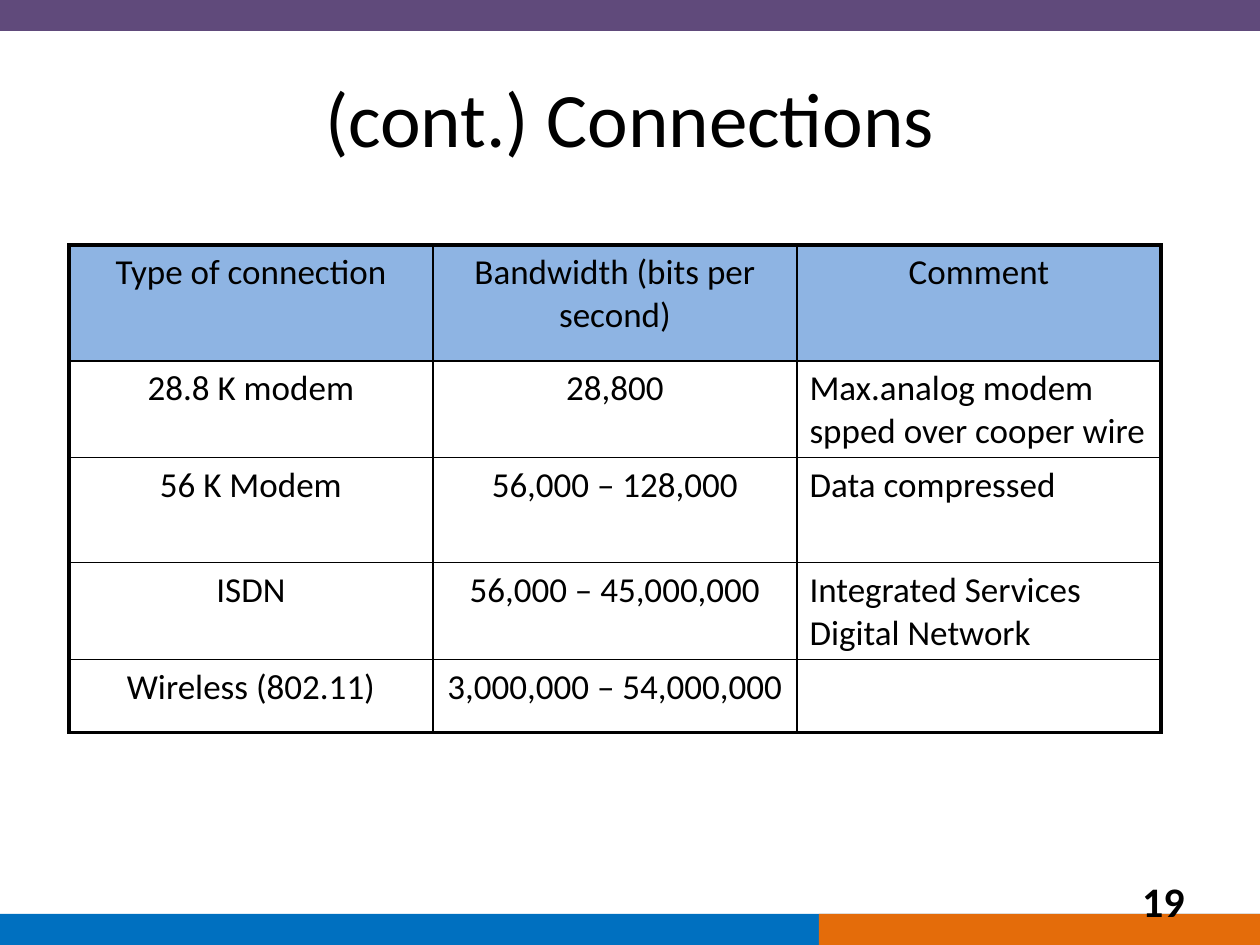
"""Build a slide that compares connection types in a table."""
from dataclasses import dataclass

from lxml.etree import SubElement
from pptx import Presentation
from pptx.dml.color import RGBColor
from pptx.enum.shapes import MSO_SHAPE as SHAPE
from pptx.enum.text import MSO_ANCHOR as ANCHOR, PP_ALIGN as ALIGN
from pptx.oxml.ns import qn
from pptx.util import Emu, Pt


@dataclass(frozen=True)
class Theme:
    """Colours, font and type sizes of the slide."""
    purple: str = "604A7B"
    blue: str = "0070C0"
    orange: str = "E46C0A"
    header: str = "8EB4E3"
    ink: str = "000000"
    font: str = "Calibri"
    title: int = 44
    body: int = 20
    number: int = 24
    outer: float = 2.25
    inner: float = 1


THEME = Theme()
COLUMN_WIDTH = 364
ROW_HEIGHTS = [116, 84, 105, 73, 73]
ROWS = [
    ("Type of connection", "Bandwidth (bits per second)", "Comment"),
    ("28.8 K modem", "28,800", "Max.analog modem spped over cooper wire"),
    ("56 K Modem", "56,000 – 128,000", "Data compressed"),
    ("ISDN", "56,000 – 45,000,000", "Integrated Services Digital Network"),
    ("Wireless (802.11)", "3,000,000 – 54,000,000", ""),
]


def px(n):
    """Turn pixels into EMU."""
    return Emu(round(n * 914400 / 126))


def rgb(value):
    """Turn a hex string into a colour."""
    return RGBColor.from_string(value)


def write(tf, text, size, align, bold=False):
    """Set one styled paragraph of text."""
    tf.text = text
    p = tf.paragraphs[0]
    p.alignment = align
    for r in p.runs:
        r.font.name = THEME.font
        r.font.size = Pt(size)
        r.font.bold = bold
        r.font.color.rgb = rgb(THEME.ink)


def add_bar(s, left, top, width, height, color):
    """Add a plain coloured bar."""
    sp = s.shapes.add_shape(SHAPE.RECTANGLE, px(left), px(top), px(width), px(height))
    sp.shadow.inherit = False
    sp.fill.solid()
    sp.fill.fore_color.rgb = rgb(color)
    sp.line.fill.background()


def add_text(s, left, top, width, height, text, size, align, bold=False):
    """Add a wrapped, vertically centred text box."""
    tf = s.shapes.add_textbox(px(left), px(top), px(width), px(height)).text_frame
    tf.word_wrap = True
    tf.vertical_anchor = ANCHOR.MIDDLE
    write(tf, text, size, align, bold)


def set_borders(cell, outer_sides):
    """Draw the four cell borders, thicker on the outer sides."""
    props = cell._tc.get_or_add_tcPr()
    for side, is_outer in outer_sides.items():
        width = THEME.outer if is_outer else THEME.inner
        line = SubElement(props, qn(f"a:ln{side}"), w=str(Pt(width)))
        fill = SubElement(line, qn("a:solidFill"))
        SubElement(fill, qn("a:srgbClr"), val=THEME.ink)


def add_connection_table(s, left, top):
    """Add the table of connection types."""
    last_row, last_col = len(ROWS) - 1, len(ROWS[0]) - 1
    frame = s.shapes.add_table(len(ROWS), len(ROWS[0]), px(left), px(top),
                               px(COLUMN_WIDTH * len(ROWS[0])), px(sum(ROW_HEIGHTS)))
    table = frame.table
    table.first_row = table.horz_banding = False
    for column in table.columns:
        column.width = px(COLUMN_WIDTH)
    for i, (texts, height) in enumerate(zip(ROWS, ROW_HEIGHTS)):
        table.rows[i].height = px(height)
        for j, text in enumerate(texts):
            cell = table.cell(i, j)
            is_comment = i > 0 and j == last_col
            write(cell.text_frame, text, THEME.body,
                  ALIGN.LEFT if is_comment else ALIGN.CENTER)
            set_borders(cell, {"L": j == 0, "R": j == last_col,
                               "T": i == 0, "B": i == last_row})
            if i == 0:
                cell.fill.solid()
                cell.fill.fore_color.rgb = rgb(THEME.header)
            else:
                cell.fill.background()


def main():
    """Build and save the slide."""
    prs = Presentation()
    prs.slide_width, prs.slide_height = px(1260), px(945)
    s = prs.slides.add_slide(prs.slide_layouts[6])
    add_bar(s, 0, 0, 1260, 31, THEME.purple)
    add_bar(s, -10, 914, 1270, 31, THEME.blue)
    add_bar(s, 819, 914, 441, 31, THEME.orange)
    add_text(s, 63, 38, 1134, 157, "(cont.) Connections", THEME.title, ALIGN.CENTER)
    add_connection_table(s, 69, 245)
    add_text(s, 903, 876, 294, 50, "19", THEME.number, ALIGN.RIGHT, bold=True)
    prs.save("out.pptx")


if __name__ == "__main__":
    main()
